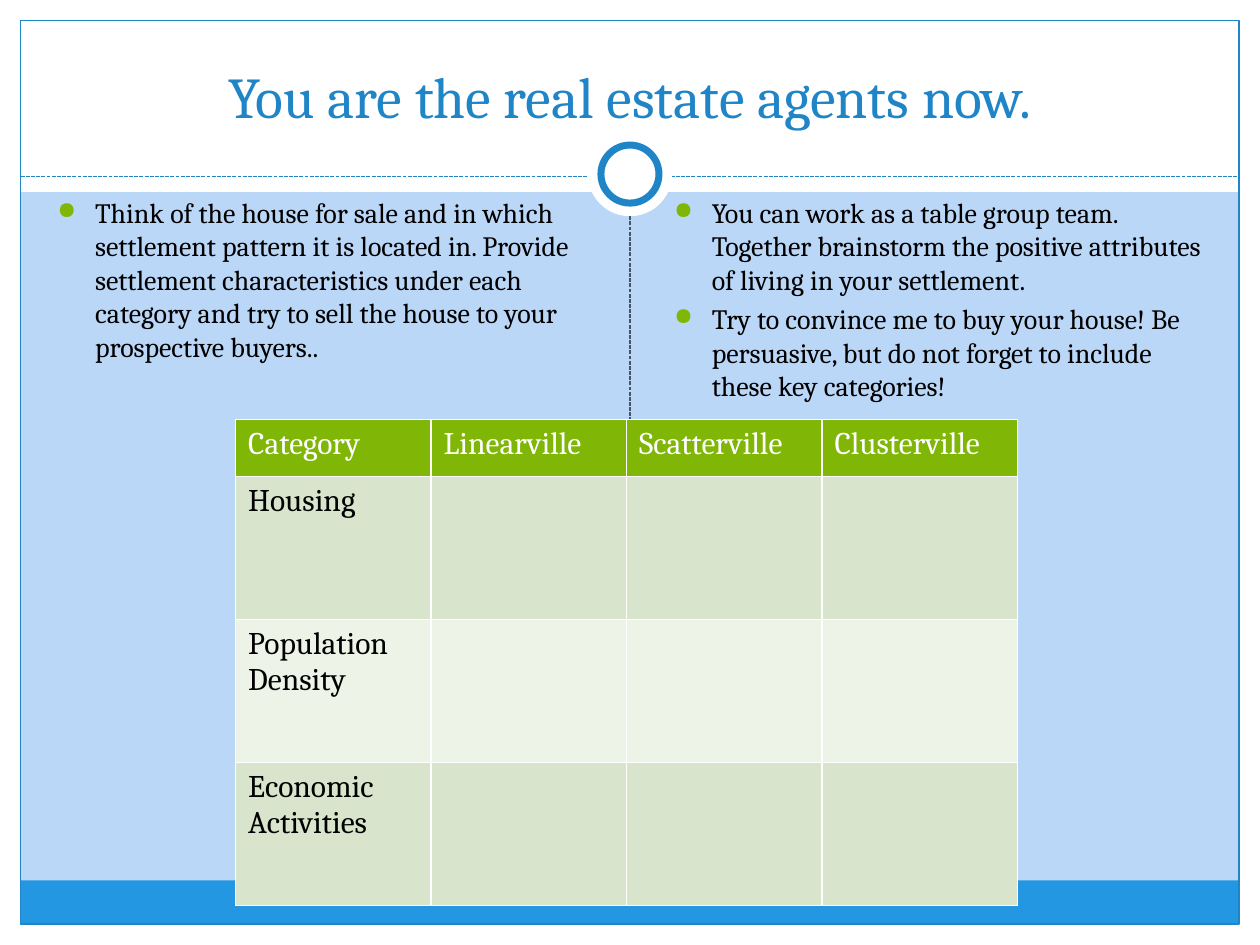
from dataclasses import dataclass
from typing import Optional

from lxml import etree
from pptx import Presentation
from pptx import util as u
from pptx.dml.color import RGBColor
from pptx.enum import dml, shapes, text
from pptx.oxml import ns

FONT = "Cambria"
WHITE, BLACK, BLUE, GREEN = "FFFFFF", "000000", "1F85C7", "80B606"
SLATE, FOOTER_BLUE, BACKGROUND = "465466", "2397E2", "BBD7F8"
BANDS = ("D8E5CC", "EDF3E7")
WIDTH, HEIGHT, MARGIN = 25.4, 19.05, 0.42
CENTER = WIDTH / 2
INNER_WIDTH = WIDTH - 2 * MARGIN
FOOTER_TOP, FRAME_BOTTOM = 17.75, HEIGHT - MARGIN
RULE_TOP, CIRCLE_CENTER = 3.56, 3.51
COLUMN_WIDTH, HEADER_HEIGHT, ROW_HEIGHT = 3.94, 1.15, 2.88


@dataclass
class Panel:
    left: float
    top: float
    width: float
    height: float
    fill: Optional[str] = None
    line: Optional[str] = None
    line_width: float = 0.75
    kind: shapes.MSO_SHAPE = shapes.MSO_SHAPE.RECTANGLE


@dataclass
class TextBlock:
    left: float
    top: float
    width: float
    height: float
    paragraphs: list[str]


def disc(diameter: float, line: Optional[str] = None) -> Panel:
    return Panel(CENTER - diameter / 2, CIRCLE_CENTER - diameter / 2, diameter, diameter,
                 WHITE, line, 4, shapes.MSO_SHAPE.OVAL)


FOOTER = Panel(MARGIN, FOOTER_TOP, INNER_WIDTH, FRAME_BOTTOM - FOOTER_TOP, FOOTER_BLUE)
PANELS = [
    Panel(0, FRAME_BOTTOM, WIDTH, MARGIN, WHITE),
    Panel(0, 0, WIDTH, 3.87, WHITE),
    Panel(0, 0, MARGIN, HEIGHT, WHITE),
    Panel(WIDTH - MARGIN, 0, MARGIN, HEIGHT, WHITE),
    Panel(MARGIN, MARGIN, INNER_WIDTH, HEIGHT - 2 * MARGIN, None, BLUE),
]
TITLE = TextBlock(0.85, 0.64, 23.7, 2.11, ["You are the real estate agents now."])
BODIES = [
    TextBlock(0.91, 3.81, 11.23, 14.45, [
        "Think of the house for sale and in which settlement pattern it is located in. "
        "Provide settlement characteristics under each category and try to sell the house "
        "to your prospective buyers..",
    ]),
    TextBlock(13.34, 3.81, 11.23, 13, [
        "You can work as a table group team. Together brainstorm the positive attributes "
        "of living in your settlement.",
        "Try to convince me to buy your house! Be persuasive, but do not forget to include "
        "these key categories!",
    ]),
]
HEADERS = ["Category", "Linearville", "Scatterville", "Clusterville"]
CATEGORIES = ["Housing", "Population\nDensity", "Economic Activities"]


def color(value: str) -> RGBColor:
    return RGBColor.from_string(value)


def add_panel(slide, panel: Panel):
    shape = slide.shapes.add_shape(panel.kind, u.Cm(panel.left), u.Cm(panel.top),
                                   u.Cm(panel.width), u.Cm(panel.height))
    shape.shadow.inherit = False
    if panel.fill:
        shape.fill.solid()
        shape.fill.fore_color.rgb = color(panel.fill)
    else:
        shape.fill.background()
    if panel.line:
        shape.line.color.rgb = color(panel.line)
        shape.line.width = u.Pt(panel.line_width)
    else:
        shape.line.fill.background()
    return shape


def add_dashed_line(slide, start: tuple[float, float], end: tuple[float, float], line: str):
    connector = slide.shapes.add_connector(shapes.MSO_CONNECTOR.STRAIGHT,
                                           *(u.Cm(value) for value in start + end))
    connector.line.color.rgb = color(line)
    connector.line.width = u.Pt(0.75)
    connector.line.dash_style = dml.MSO_LINE.SQUARE_DOT
    etree.SubElement(connector._element.spPr, ns.qn("a:effectLst"))
    return connector


def format_runs(paragraph, size: float, font_color: str) -> None:
    for run in paragraph.runs:
        run.font.name = FONT
        run.font.size = u.Pt(size)
        run.font.bold = False
        run.font.color.rgb = color(font_color)


def add_bullet(paragraph) -> None:
    properties = paragraph._p.get_or_add_pPr()
    properties.set("marL", str(u.Cm(0.76)))
    properties.set("indent", str(-u.Cm(0.76)))
    bullet_color = etree.SubElement(properties, ns.qn("a:buClr"))
    etree.SubElement(bullet_color, ns.qn("a:srgbClr"), val=GREEN)
    etree.SubElement(properties, ns.qn("a:buSzPct"), val="85000")
    etree.SubElement(properties, ns.qn("a:buChar"), char="●")


def add_text(slide, block: TextBlock):
    shape = slide.shapes.add_textbox(u.Cm(block.left), u.Cm(block.top),
                                     u.Cm(block.width), u.Cm(block.height))
    shape.text_frame.word_wrap = True
    shape.text_frame.text = "\n".join(block.paragraphs)
    return shape.text_frame


def add_title(slide, block: TextBlock) -> None:
    frame = add_text(slide, block)
    frame.vertical_anchor = text.MSO_ANCHOR.BOTTOM
    frame.paragraphs[0].alignment = text.PP_ALIGN.CENTER
    format_runs(frame.paragraphs[0], 33, BLUE)


def add_body(slide, block: TextBlock) -> None:
    for index, paragraph in enumerate(add_text(slide, block).paragraphs):
        add_bullet(paragraph)
        if index:
            paragraph.space_before = u.Pt(3.2)
        format_runs(paragraph, 16, BLACK)


def format_cell(cell, fill: str, font_color: str) -> None:
    cell.fill.solid()
    cell.fill.fore_color.rgb = color(fill)
    properties = cell._tc.get_or_add_tcPr()
    for index, side in enumerate(("lnL", "lnR", "lnT", "lnB")):
        border = etree.Element(ns.qn(f"a:{side}"), w=str(u.Pt(1)))
        border_fill = etree.SubElement(border, ns.qn("a:solidFill"))
        etree.SubElement(border_fill, ns.qn("a:srgbClr"), val=WHITE)
        properties.insert(index, border)
    for paragraph in cell.text_frame.paragraphs:
        format_runs(paragraph, 18, font_color)


def add_category_table(slide) -> None:
    heights = [HEADER_HEIGHT] + [ROW_HEIGHT] * len(CATEGORIES)
    table = slide.shapes.add_table(
        len(heights), len(HEADERS), u.Cm(4.75), u.Cm(8.46),
        u.Cm(COLUMN_WIDTH * len(HEADERS)), u.Cm(sum(heights))).table
    for column, header in zip(table.columns, HEADERS):
        column.width = u.Cm(COLUMN_WIDTH)
    for index, header in enumerate(HEADERS):
        table.cell(0, index).text_frame.text = header
    for index, category in enumerate(CATEGORIES, 1):
        table.cell(index, 0).text_frame.text = category
    for index, (row, height) in enumerate(zip(table.rows, heights)):
        row.height = u.Cm(height)
        fill = BANDS[(index - 1) % 2] if index else GREEN
        for cell in row.cells:
            format_cell(cell, fill, BLACK if index else WHITE)


def main() -> None:
    presentation = Presentation()
    presentation.slide_width, presentation.slide_height = u.Cm(WIDTH), u.Cm(HEIGHT)
    slide = presentation.slides.add_slide(presentation.slide_layouts[6])
    slide.background.fill.solid()
    slide.background.fill.fore_color.rgb = color(BACKGROUND)
    footer = add_panel(slide, FOOTER)
    for panel in PANELS:
        add_panel(slide, panel)
    add_dashed_line(slide, (MARGIN, RULE_TOP), (WIDTH - MARGIN, RULE_TOP), BLUE)
    for panel in (disc(1.7), disc(1.17, BLUE)):
        add_panel(slide, panel)
    divider = add_dashed_line(slide, (CENTER, FOOTER_TOP), (CENTER, 4.36), SLATE)
    divider.begin_connect(footer, 0)
    add_title(slide, TITLE)
    for block in BODIES:
        add_body(slide, block)
    add_category_table(slide)
    presentation.save("out.pptx")


if __name__ == "__main__":
    main()
